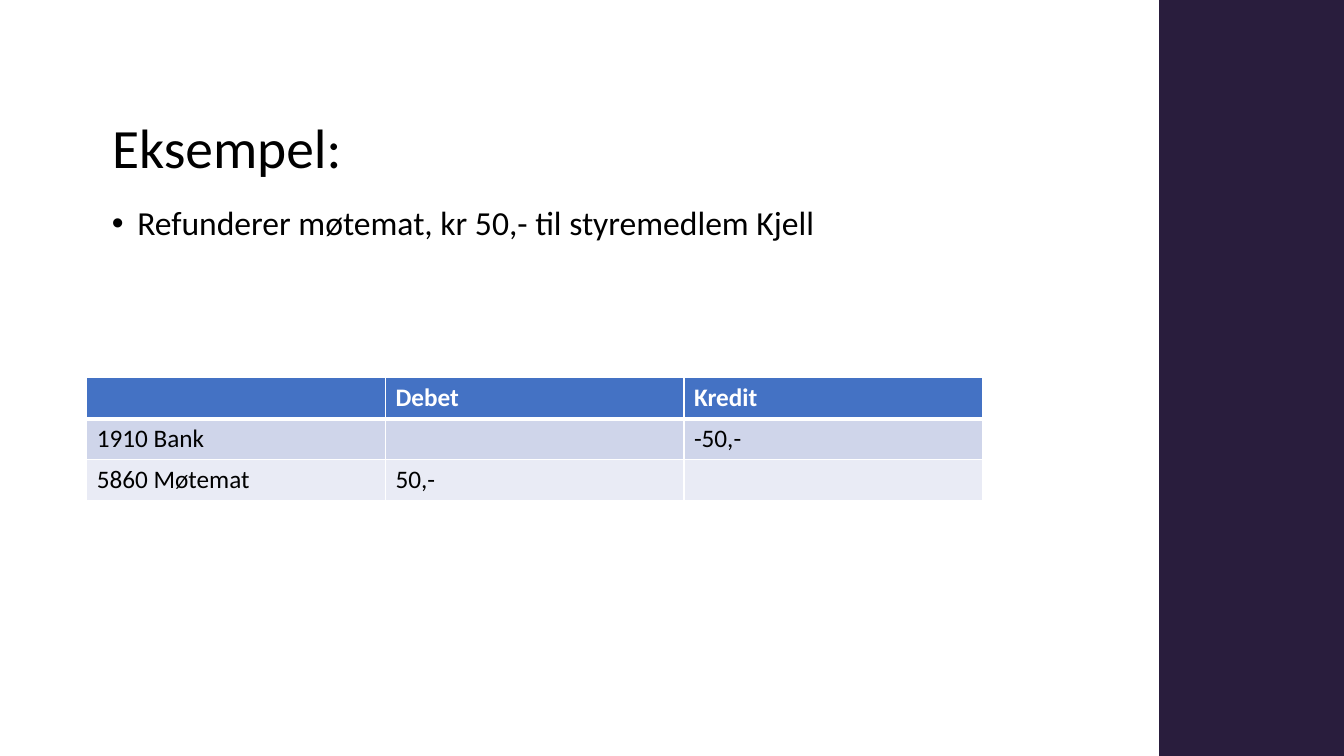
from dataclasses import dataclass

from lxml import etree
from pptx import Presentation
from pptx.dml.color import RGBColor
from pptx.enum.shapes import MSO_SHAPE
from pptx.enum.text import MSO_ANCHOR, PP_ALIGN
from pptx.oxml.ns import qn
from pptx.util import Cm, Pt

RECT = MSO_SHAPE.RECTANGLE
MIDDLE = MSO_ANCHOR.MIDDLE
LEFT = PP_ALIGN.LEFT
TITLE_ONLY = 5


@dataclass(frozen=True)
class Theme:
    font: str = "Calibri"
    ink: str = "000000"
    white: str = "FFFFFF"
    side: str = "291D3D"
    head: str = "4472C4"
    bands: tuple = ("CFD5EA", "E9EBF5")
    title: float = 39.6
    body: float = 24
    cell: float = 18
    leading: float = 0.9


THEME = Theme()
ENTRIES = (
    ("", "Debet", "Kredit"),
    ("1910 Bank", "", "-50,-"),
    ("5860 Møtemat", "50,-", ""),
)


def add_run(para, text, size, color=THEME.ink, bold=False):
    run = para.add_run()
    run.text = text
    font = run.font
    font.name, font.size, font.bold = THEME.font, Pt(size), bold
    font.color.rgb = RGBColor.from_string(color)


def add_band(slide, box):
    band = slide.shapes.add_shape(RECT, *box)
    band.shadow.inherit = False
    band.fill.solid()
    band.fill.fore_color.rgb = RGBColor.from_string(THEME.side)
    band.line.fill.background()


def set_title(slide, box, text):
    title = slide.shapes.title
    title.left, title.top, title.width, title.height = box
    frame = title.text_frame
    frame.vertical_anchor = MIDDLE
    para = frame.paragraphs[0]
    para.alignment = LEFT
    para.line_spacing = THEME.leading
    add_run(para, text, THEME.title)


def add_body(slide, box, text):
    frame = slide.shapes.add_textbox(*box).text_frame
    frame.word_wrap = True
    para = frame.paragraphs[0]
    props = para._p.get_or_add_pPr()
    indent = Cm(0.64)
    props.set("marL", str(indent))
    props.set("indent", str(-indent))
    etree.SubElement(props, qn("a:buFont")).set("typeface", "Arial")
    etree.SubElement(props, qn("a:buChar")).set("char", "•")
    para.line_spacing = THEME.leading
    add_run(para, text, THEME.body)


def set_edges(cell, widths):
    """Draw white left, right, top and bottom borders, widths in points."""
    props = cell._tc.get_or_add_tcPr()
    for side, width in zip("LRTB", widths):
        line = etree.SubElement(props, qn(f"a:ln{side}"), w=str(Pt(width)))
        fill = etree.SubElement(line, qn("a:solidFill"))
        etree.SubElement(fill, qn("a:srgbClr"), val=THEME.white)


def add_ledger(slide, box, rows):
    table = slide.shapes.add_table(len(rows), len(rows[0]), *box).table
    for r, row in enumerate(rows):
        head = r == 0
        fill = THEME.head if head else THEME.bands[(r - 1) % 2]
        color = THEME.white if head else THEME.ink
        for c, text in enumerate(row):
            cell = table.cell(r, c)
            set_edges(cell, (1, 1, 3 if r == 1 else 1, 3 if head else 1))
            cell.fill.solid()
            cell.fill.fore_color.rgb = RGBColor.from_string(fill)
            para = cell.text_frame.paragraphs[0]
            if text:
                add_run(para, text, THEME.cell, color, head)
            else:
                para.font.size = Pt(THEME.cell)


def main():
    deck = Presentation()
    deck.slide_width, deck.slide_height = Cm(33.87), Cm(19.05)
    slide = deck.slides.add_slide(deck.slide_layouts[TITLE_ONLY])
    edge = Cm(29.21)
    add_band(slide, (edge, 0, deck.slide_width - edge, deck.slide_height))
    left, width = Cm(2.57), Cm(24.84)
    set_title(slide, (left, Cm(2.9), width, Cm(1.8)), "Eksempel:")
    add_body(slide, (left, Cm(5.08), width, Cm(12.09)),
             "Refunderer møtemat, kr 50,- til styremedlem Kjell")
    add_ledger(slide, (Cm(2.19), Cm(9.52), Cm(22.57), Cm(3.09)), ENTRIES)
    deck.save("out.pptx")


if __name__ == "__main__":
    main()
